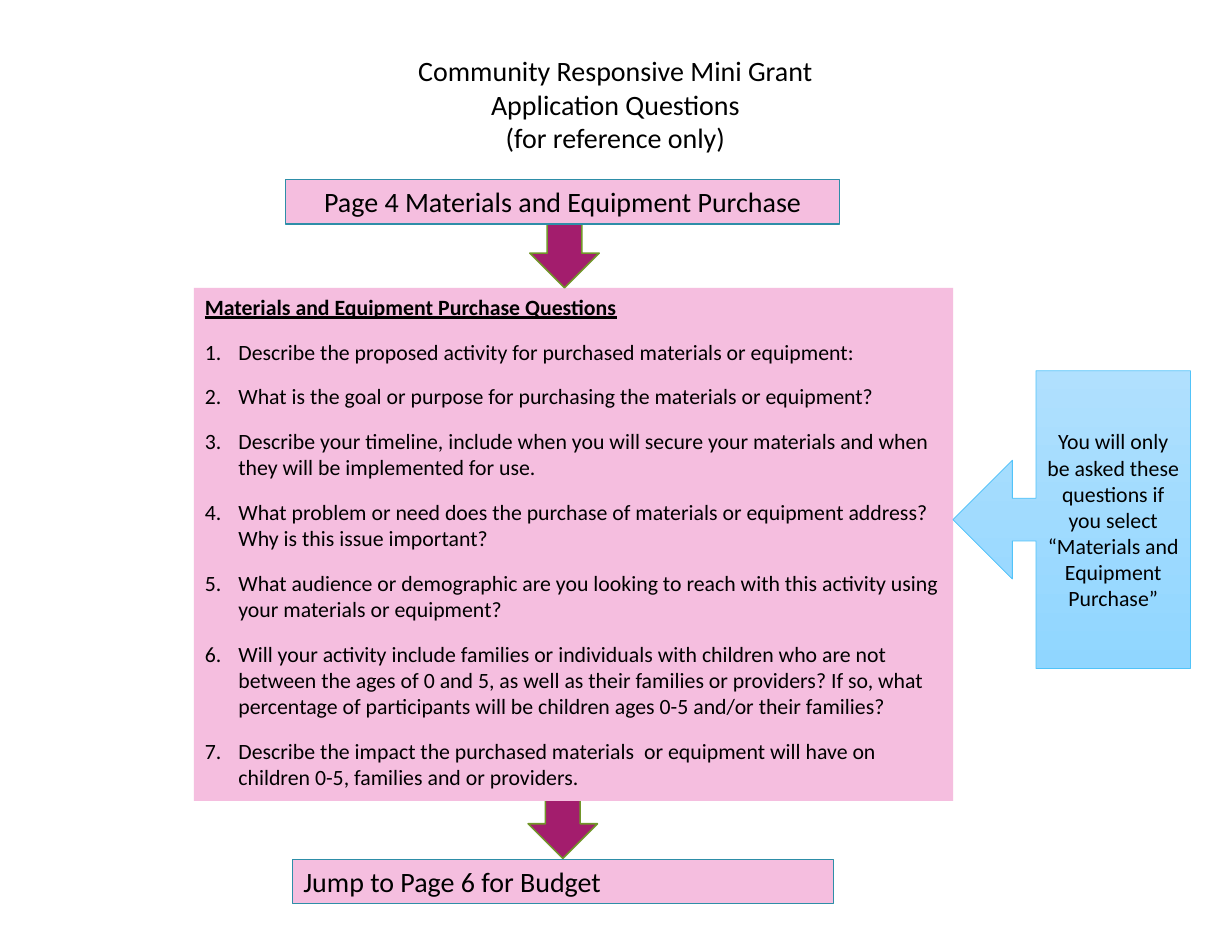
import pptx
import pptx.util
from lxml import etree
from pptx.dml.color import RGBColor
from pptx.enum.shapes import MSO_SHAPE
from pptx.enum.text import MSO_ANCHOR, MSO_AUTO_SIZE, PP_ALIGN
from pptx.oxml.ns import qn

# Content
TITLE = ["Community Responsive Mini Grant", "Application Questions", "(for reference only)"]
HEADING = "Page 4 Materials and Equipment Purchase"
PANEL_HEADING = "Materials and Equipment Purchase Questions"
QUESTIONS = [
    "Describe the proposed activity for purchased materials or equipment:",
    "What is the goal or purpose for purchasing the materials or equipment?",
    "Describe your timeline, include when you will secure your materials and when they will be "
    "implemented for use.",
    "What problem or need does the purchase of materials or equipment address? Why is this "
    "issue important?",
    "What audience or demographic are you looking to reach with this activity using your "
    "materials or equipment?",
    "Will your activity include families or individuals with children who are not between the "
    "ages of 0 and 5, as well as their families or providers? If so, what percentage of "
    "participants will be children ages 0-5 and/or their families?",
    "Describe the impact the purchased materials  or equipment will have on children 0-5, "
    "families and or providers.",
]
CONDITION = ("You will only be asked these questions if you select "
             "“Materials and Equipment Purchase”")
NEXT_STEP = "Jump to Page 6 for Budget"

# Style
FONT = "Calibri"
COLORS = {
    "text": "000000", "pink": "F5BEDF", "teal": "2E8EA8", "plum": "A31D6D",
    "green": "719629", "sky_top": "B0E0FE", "sky_bottom": "90D6FF", "sky_line": "51C3F9",
}

# Places: left, top, width, height as percent of the slide
PLACES = {
    "title": (27.45, 5.06, 45, 11.88),
    "heading": (23.18, 18.82, 45, 4.71),
    "panel": (15.73, 30.24, 61.64, 53.88),
    "callout": (77.36, 38.94, 19.27, 31.29),
    "next": (23.73, 90.24, 43.91, 4.71),
    "upper arrow": (42.82, 22.71, 6, 7.29),
    "lower arrow": (40, 79.18, 11.36, 7.29),
}
CALLOUT_SHAPE = (0.18, 0.25, 0.25, 0.65)

deck = pptx.Presentation()
deck.slide_width = pptx.util.Inches(11)
deck.slide_height = pptx.util.Inches(8.5)
page = deck.slides.add_slide(deck.slide_layouts[6])


def color(name):
    return RGBColor.from_string(COLORS[name])


def place(name):
    sides = (deck.slide_width, deck.slide_height) * 2
    return [round(side * share / 100) for side, share in zip(sides, PLACES[name])]


def add_block(kind, name, fill=None, line=None, width=0.75):
    block = page.shapes.add_shape(kind, *place(name))
    block.shadow.inherit = False
    if fill:
        block.fill.solid()
        block.fill.fore_color.rgb = color(fill)
    if line:
        block.line.color.rgb = color(line)
        block.line.width = pptx.util.Pt(width)
    else:
        block.line.fill.background()
    return block


def add_arrow(name):
    arrow = add_block(MSO_SHAPE.RIGHT_ARROW, name, fill="plum", line="green", width=1)
    arrow.rotation = 90


def number(para, indent=0.3):
    props = para._p.get_or_add_pPr()
    props.set("marL", str(pptx.util.Inches(indent)))
    props.set("indent", str(-pptx.util.Inches(indent)))
    etree.SubElement(props, qn("a:buFont"), typeface="+mj-lt")
    etree.SubElement(props, qn("a:buAutoNum"), type="arabicPeriod")


def write(box, text, size=18, align=PP_ALIGN.LEFT, gap=0, bold=False, underline=False,
          numbered=False, anchor=MSO_ANCHOR.TOP, fit=MSO_AUTO_SIZE.SHAPE_TO_FIT_TEXT):
    frame = box.text_frame
    frame.word_wrap = True
    frame.auto_size = fit
    frame.vertical_anchor = anchor
    for line in [text] if isinstance(text, str) else text:
        para = frame.add_paragraph() if frame.text else frame.paragraphs[0]
        para.alignment = align
        para.space_before = para.space_after = pptx.util.Pt(gap)
        if numbered:
            number(para)
        span = para.add_run()
        span.text = line
        span.font.name = FONT
        span.font.size = pptx.util.Pt(size)
        span.font.color.rgb = color("text")
        span.font.bold = bold
        span.font.underline = underline


# Question panel, over the tail of the lower arrow
add_arrow("lower arrow")
panel = add_block(MSO_SHAPE.RECTANGLE, "panel", fill="pink")
write(panel, PANEL_HEADING, size=14, gap=6, bold=True, underline=True)
write(panel, QUESTIONS, size=14, gap=6, numbered=True)

# Title
title = page.shapes.add_textbox(*place("title"))
write(title, TITLE, align=PP_ALIGN.CENTER)

# Page heading, over the tail of the upper arrow
add_arrow("upper arrow")
heading = add_block(MSO_SHAPE.RECTANGLE, "heading", fill="pink", line="teal")
write(heading, HEADING, align=PP_ALIGN.CENTER, gap=6)

# Condition callout
callout = add_block(MSO_SHAPE.LEFT_ARROW_CALLOUT, "callout", line="sky_line", width=0.5)
for index, value in enumerate(CALLOUT_SHAPE):
    callout.adjustments[index] = value
callout.fill.gradient()
callout.fill.gradient_angle = 270
for stop, name in zip(callout.fill.gradient_stops, ("sky_top", "sky_bottom")):
    stop.color.rgb = color(name)
write(callout, CONDITION, size=14, align=PP_ALIGN.CENTER, anchor=MSO_ANCHOR.MIDDLE,
      fit=MSO_AUTO_SIZE.NONE)

# Next step
next_step = add_block(MSO_SHAPE.RECTANGLE, "next", fill="pink", line="teal")
write(next_step, NEXT_STEP, gap=6)

deck.save("out.pptx")
